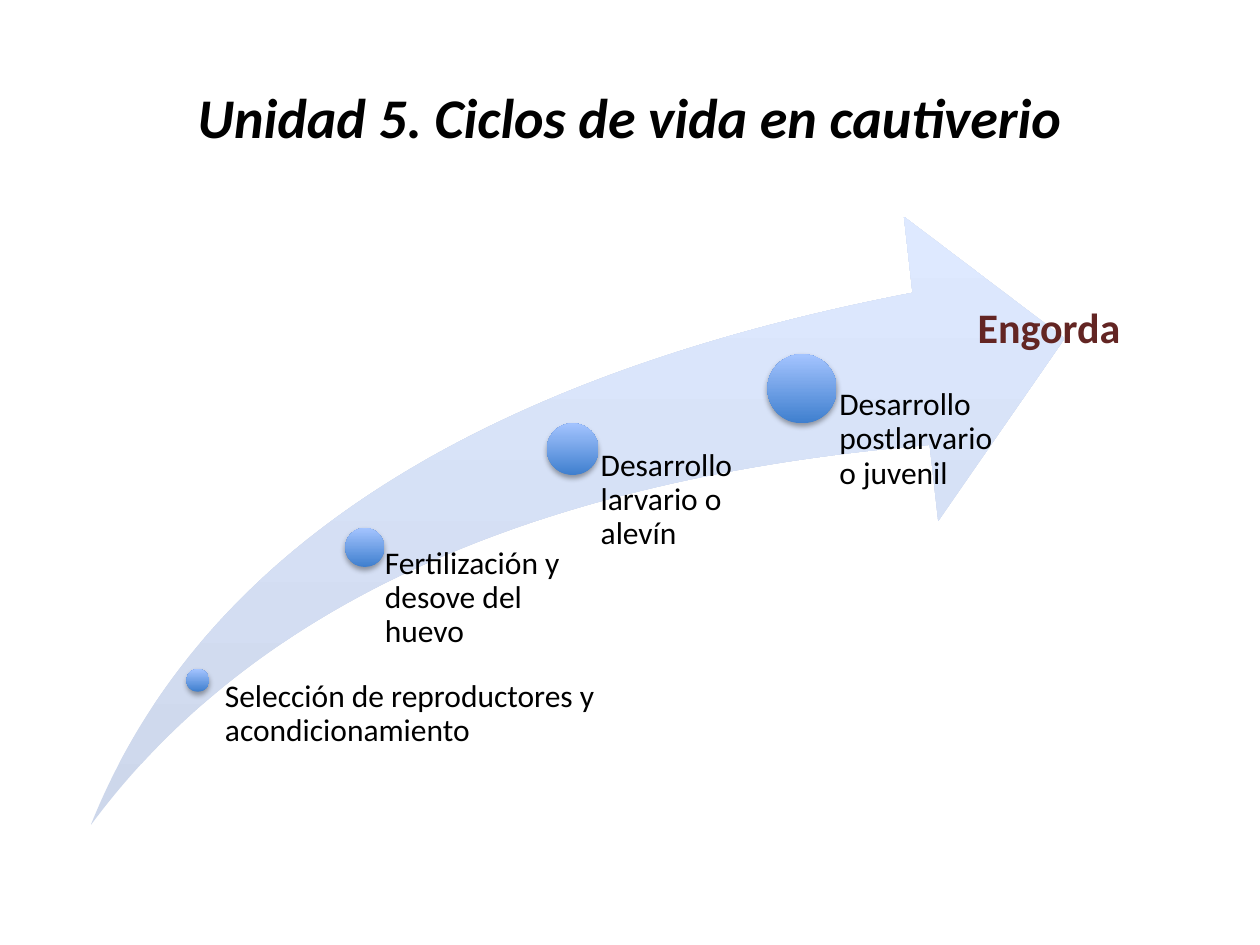
"""Build a slide of life-cycle stages along a rising arrow."""
from lxml.etree import SubElement
from pptx import Presentation
from pptx.dml.color import RGBColor
from pptx.enum.shapes import MSO_SHAPE
from pptx.enum.text import MSO_ANCHOR, PP_ALIGN
from pptx.oxml.ns import qn
from pptx.util import Inches, Pt

COLS, ROWS = 100, 75
CELL = Inches(0.1)
BASE = 65.5
BLACK = RGBColor(0x00, 0x00, 0x00)
MAROON = RGBColor(0x63, 0x25, 0x23)
PALE = (RGBColor(0xCD, 0xD7, 0xEB), RGBColor(0xDE, 0xE9, 0xFF))
BLUE = (RGBColor(0x3F, 0x7F, 0xCE), RGBColor(0xA4, 0xC4, 0xFF))
STAGES = [
    (15.7, 54, 1.8, 16.9, 40.4, "Selección de reproductores y acondicionamiento"),
    (28.95, 43.45, 3.1, 28.9, 16.2, "Fertilización y desove del huevo"),
    (45.45, 35.65, 4.1, 45.5, 16.2, "Desarrollo larvario o alevín"),
    (63.65, 30.85, 5.5, 63.7, 16.2, "Desarrollo postlarvario o juvenil"),
]


def place(*cells):
    """Turn grid cells into lengths."""
    return [round(n * CELL) for n in cells]


def add_form(slide, kind, box, shades):
    """Add a shape without outline, shaded from bottom to top."""
    form = slide.shapes.add_shape(kind, *place(*box))
    form.shadow.inherit = False
    form.line.fill.background()
    form.fill.gradient()
    form.fill.gradient_angle = 90
    for stop, shade in zip(form.fill.gradient_stops, shades):
        stop.color.rgb = shade
    return form


def add_shade(form):
    """Drop a soft shadow below a shape."""
    effects = form._element.spPr.find(qn("a:effectLst"))
    outer = SubElement(effects, qn("a:outerShdw"), blurRad=str(Pt(3.1)),
                       dist=str(Pt(1.8)), dir="5400000", rotWithShape="0")
    color = SubElement(outer, qn("a:srgbClr"), val=str(BLACK))
    SubElement(color, qn("a:alpha"), val="35000")


def add_text(slide, box, words, size, color=BLACK, bold=False, italic=False):
    """Add a wrapped text box with one paragraph."""
    frame = slide.shapes.add_textbox(*place(*box)).text_frame
    frame.word_wrap = True
    para = frame.paragraphs[0]
    para.text = words
    font = para.font
    font.name, font.size = "Calibri", Pt(size)
    font.bold, font.italic = bold, italic
    font.color.rgb = color
    return frame


def add_stage(slide, x, y, size, left, width, words):
    """Add a dot centred on x and y, with its label below right."""
    dot = add_form(slide, MSO_SHAPE.OVAL,
                   (x - size / 2, y - size / 2, size, size), BLUE)
    add_shade(dot)
    frame = add_text(slide, (left, y, width, BASE - y), words, 18)
    frame.margin_left = round(size * 0.53 * CELL)
    frame.margin_top = frame.margin_right = frame.margin_bottom = 0
    frame.paragraphs[0].line_spacing = 0.9


def main():
    """Build and save the slide."""
    deck = Presentation()
    deck.slide_width, deck.slide_height = place(COLS, ROWS)
    slide = deck.slides.add_slide(deck.slide_layouts[6])
    title = add_text(slide, (5, 3, 90, 12.5),
                     "Unidad 5. Ciclos de vida en cautiverio", 32,
                     bold=True, italic=True)
    title.vertical_anchor = MSO_ANCHOR.MIDDLE
    title.paragraphs[0].alignment = PP_ALIGN.CENTER
    arrow = add_form(slide, MSO_SHAPE.SWOOSH_ARROW,
                     (7.2, 17.2, 77.3, 48.3), PALE)
    arrow.adjustments[0] = arrow.adjustments[1] = 0.25
    for stage in STAGES:
        add_stage(slide, *stage)
    add_text(slide, (76.6, 23.4, 19.5, 5), "Engorda", 24, MAROON, bold=True)
    deck.save("out.pptx")


if __name__ == "__main__":
    main()
